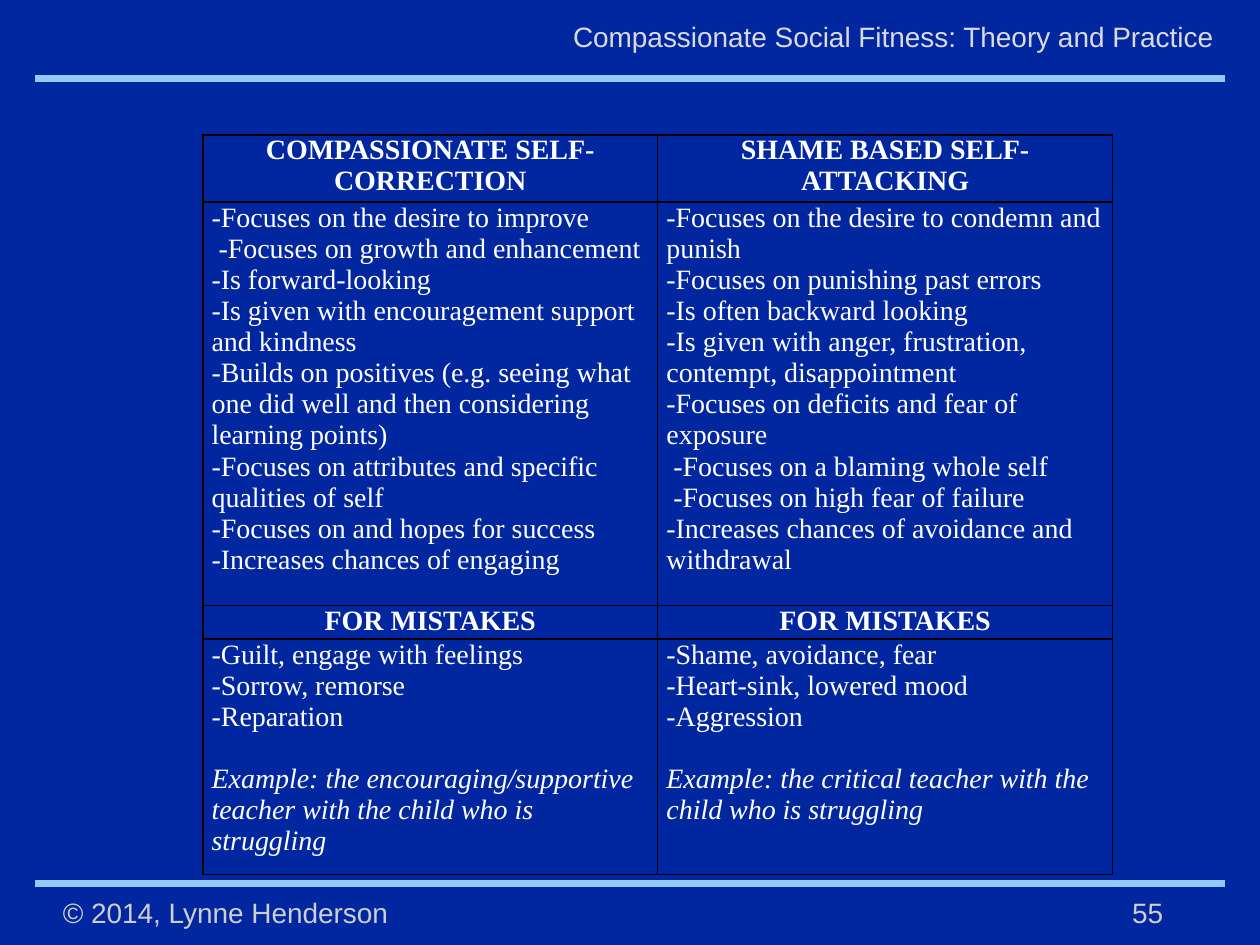
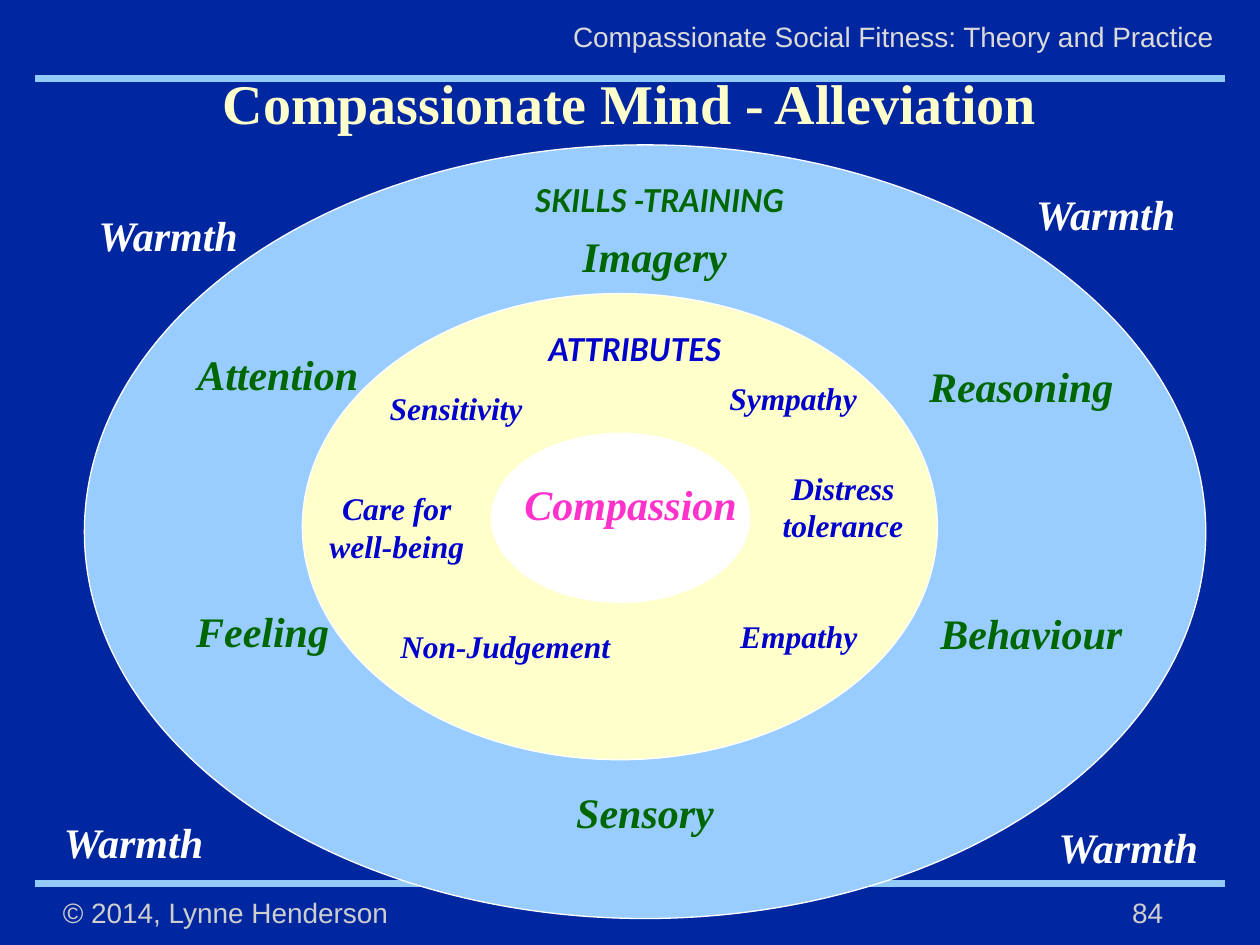
from lxml import etree
from pptx import Presentation
from pptx.dml.color import RGBColor
from pptx.enum.shapes import MSO_CONNECTOR, MSO_SHAPE
from pptx.enum.text import MSO_ANCHOR, PP_ALIGN
from pptx.oxml import parse_xml
from pptx.oxml.ns import nsdecls, qn
from pptx.util import Inches, Pt

LEFT, CENTER, RIGHT = PP_ALIGN.LEFT, PP_ALIGN.CENTER, PP_ALIGN.RIGHT
TOP, BOTTOM = MSO_ANCHOR.TOP, MSO_ANCHOR.BOTTOM
OVAL = MSO_SHAPE.OVAL
STRAIGHT = MSO_CONNECTOR.STRAIGHT

NAVY = RGBColor(0x00, 0x27, 0x9F)
RULE = RGBColor(0x92, 0xCA, 0xFA)
HEADER_GREY = RGBColor(0xDA, 0xDA, 0xDA)
FOOTER_GREY = RGBColor(0xCE, 0xCE, 0xCE)
SKY = RGBColor(0x99, 0xCC, 0xFF)
CREAM = RGBColor(0xFF, 0xFF, 0xCC)
WHITE = RGBColor(0xFF, 0xFF, 0xFF)
GREEN = RGBColor(0x00, 0x66, 0x00)
BLUE = RGBColor(0x00, 0x00, 0xCC)
PINK = RGBColor(0xFF, 0x33, 0xCC)

SANS, SERIF, CAPS = "Arial", "Times New Roman", "Lato"
COLUMNS, ROWS = 100, 75

HEADINGS = ["COMPASSIONATE SELF-CORRECTION", "SHAME BASED SELF-ATTACKING"]
FOCUS = [
    ["-Focuses on the desire to improve",
     " -Focuses on growth and enhancement",
     "-Is forward-looking",
     "-Is given with encouragement support and kindness",
     "-Builds on positives (e.g. seeing what one did well and then considering learning points)",
     "-Focuses on attributes and specific qualities of self",
     "-Focuses on and hopes for success",
     "-Increases chances of engaging"],
    ["-Focuses on the desire to condemn and punish",
     "-Focuses on punishing past errors",
     "-Is often backward looking",
     "-Is given with anger, frustration, contempt, disappointment",
     "-Focuses on deficits and fear of exposure",
     " -Focuses on a blaming whole self",
     " -Focuses on high fear of failure",
     "-Increases chances of avoidance and withdrawal"],
]
MISTAKES = [
    ["-Guilt, engage with feelings", "-Sorrow, remorse", "-Reparation",
     "Example: the encouraging/supportive teacher with the child who is struggling"],
    ["-Shame, avoidance, fear", "-Heart-sink, lowered mood", "-Aggression",
     "Example: the critical teacher with the child who is struggling"],
]
COMPARISON = [
    [[heading] for heading in HEADINGS],
    FOCUS,
    [["FOR MISTAKES"]] * 2,
    MISTAKES,
]
HEADING_ROWS = (0, 2)

RINGS = [
    (6.7, 11.5, 89, 61.4, SKY),
    (24, 23.3, 50.4, 37, CREAM),
    (39, 34.4, 20.5, 13.4, WHITE),
]
LABEL_GROUPS = [
    (SERIF, 24, GREEN, 5, [
        ("Imagery", 42.9, 17.8, 18.1),
        ("Attention", 12.2, 27.2, 19.7),
        ("Reasoning", 72, 28.1, 18.1),
        ("Feeling", 13, 47.6, 15.7),
        ("Behaviour", 72.8, 47.7, 18.1),
        ("Sensory", 43.7, 61.9, 15)]),
    (SERIF, 18, BLUE, 4, [
        ("Care for well-being", 24.8, 38.3, 13.4),
        ("Sensitivity", 28.7, 30.4, 15),
        ("Sympathy", 54.7, 29.6, 16.5),
        ("Distress tolerance", 60.2, 36.7, 13.4),
        ("Empathy", 56.3, 48.5, 14.2),
        ("Non-Judgement", 29.5, 49.3, 21.2)]),
    (SERIF, 24, PINK, 5, [("Compassion", 39.8, 37.5, 20.5)]),
    (CAPS, 18, BLUE, 3.7, [("ATTRIBUTES", 39, 25.7, 22.8)]),
    (CAPS, 18, GREEN, 3.7, [("SKILLS -TRAINING", 37.4, 13.9, 29.9)]),
    (SERIF, 24, WHITE, 5.1, [
        ("Warmth", 5.1, 16.1, 16.5),
        ("Warmth", 2.7, 64.3, 15.8),
        ("Warmth", 79.9, 14.5, 15.7),
        ("Warmth", 79.1, 64.7, 20.9)]),
]


class Deck:
    def __init__(self):
        self.prs = Presentation()
        self.prs.slide_width, self.prs.slide_height = Inches(10), Inches(7.5)
        self.s = None

    def x(self, columns):
        return round(self.prs.slide_width * columns / COLUMNS)

    def y(self, rows):
        return round(self.prs.slide_height * rows / ROWS)

    def box(self, left, top, width, height):
        return self.x(left), self.y(top), self.x(width), self.y(height)

    def slide(self, number):
        self.s = self.prs.slides.add_slide(self.prs.slide_layouts[6])
        fill = self.s.background.fill
        fill.solid()
        fill.fore_color.rgb = NAVY
        for row in (6.2, 70.1):
            self.rule(row)
        self.text("© 2014, Lynne Henderson", 4, 70.6, 28.1, 3.7,
                  SANS, 16, FOOTER_GREY, align=LEFT, wrap=False)
        self.text("Compassionate Social Fitness: Theory and Practice",
                  42.4, 1.1, 54.9, 3.7, SANS, 16, HEADER_GREY, align=RIGHT)
        self.text(str(number), 88.6, 70.6, 4.7, 3.7,
                  SANS, 16, FOOTER_GREY, align=RIGHT, wrap=False)

    def rule(self, row):
        line = self.s.shapes.add_connector(
            STRAIGHT, self.x(2.8), self.y(row), self.x(97.2), self.y(row))
        line.line.color.rgb = RULE
        line.line.width = Pt(4)
        etree.SubElement(line._element.spPr, qn("a:effectLst"))

    def style(self, p, font, size, color, bold=False, italic=False, align=CENTER):
        p.alignment = align
        for r in p.runs:
            r.font.name = font
            r.font.size = Pt(size)
            r.font.color.rgb = color
            r.font.bold = bold
            r.font.italic = italic

    def text(self, text, left, top, width, height, font, size, color,
             bold=False, italic=False, align=CENTER, anchor=TOP, wrap=True):
        sp = self.s.shapes.add_textbox(*self.box(left, top, width, height))
        tf = sp.text_frame
        tf.text = text
        tf.word_wrap = wrap
        tf.vertical_anchor = anchor
        self.style(tf.paragraphs[0], font, size, color, bold, italic, align)
        return sp

    def title(self, text):
        sp = self.text(text, 7.5, 2.1, 85, 9.2, SERIF, 32, CREAM,
                       bold=True, anchor=BOTTOM)
        rPr = sp.text_frame.paragraphs[0].runs[0].font._element
        rPr.find(qn("a:solidFill")).addnext(parse_xml(
            f'<a:effectLst {nsdecls("a")}>'
            '<a:outerShdw blurRad="38100" dist="38100" dir="2700000">'
            '<a:srgbClr val="000000"/></a:outerShdw></a:effectLst>'))

    def ellipse(self, left, top, width, height, color):
        sp = self.s.shapes.add_shape(OVAL, *self.box(left, top, width, height))
        sp.shadow.inherit = False
        sp.fill.solid()
        sp.fill.fore_color.rgb = color
        sp.line.color.rgb = WHITE
        sp.line.width = Pt(0.75)

    def table(self, rows, left, top, widths, heights):
        frame = self.s.shapes.add_table(
            len(rows), len(widths),
            *self.box(left, top, sum(widths), sum(heights)))
        table = frame.table
        table.first_row = table.horz_banding = False
        for column, width in zip(table.columns, widths):
            column.width = self.x(width)
        for i, (row, height) in enumerate(zip(rows, heights)):
            table.rows[i].height = self.y(height)
            for j, lines in enumerate(row):
                self.cell(table.cell(i, j), lines, i in HEADING_ROWS)

    def cell(self, cell, lines, heading):
        cell.fill.background()
        cell.margin_left = cell.margin_right = self.x(0.7)
        cell.margin_top = cell.margin_bottom = 0
        cell.text_frame.text = "\n".join(lines)
        for p in cell.text_frame.paragraphs:
            example = p.text.startswith("Example")
            self.style(p, SERIF, 16, WHITE, heading, example,
                       CENTER if heading else LEFT)
            if example:
                p.space_before = Pt(17.7)
        tcPr = cell._tc.get_or_add_tcPr()
        for i, side in enumerate("LRTB"):
            tcPr.insert(i, parse_xml(
                f'<a:ln{side} {nsdecls("a")} w="12700"><a:solidFill>'
                f'<a:srgbClr val="000000"/></a:solidFill></a:ln{side}>'))


def main():
    deck = Deck()

    deck.slide(55)
    deck.table(COMPARISON, 16.1, 10.7, [36.1, 36.1], [5.35, 32, 2.65, 18.7])

    deck.slide(84)
    deck.title("Compassionate Mind - Alleviation")
    for ring in RINGS:
        deck.ellipse(*ring)
    for font, size, color, height, labels in LABEL_GROUPS:
        for text, left, top, width in labels:
            deck.text(text, left, top, width, height, font, size, color,
                      bold=True, italic=True)

    deck.prs.save("out.pptx")


if __name__ == "__main__":
    main()
